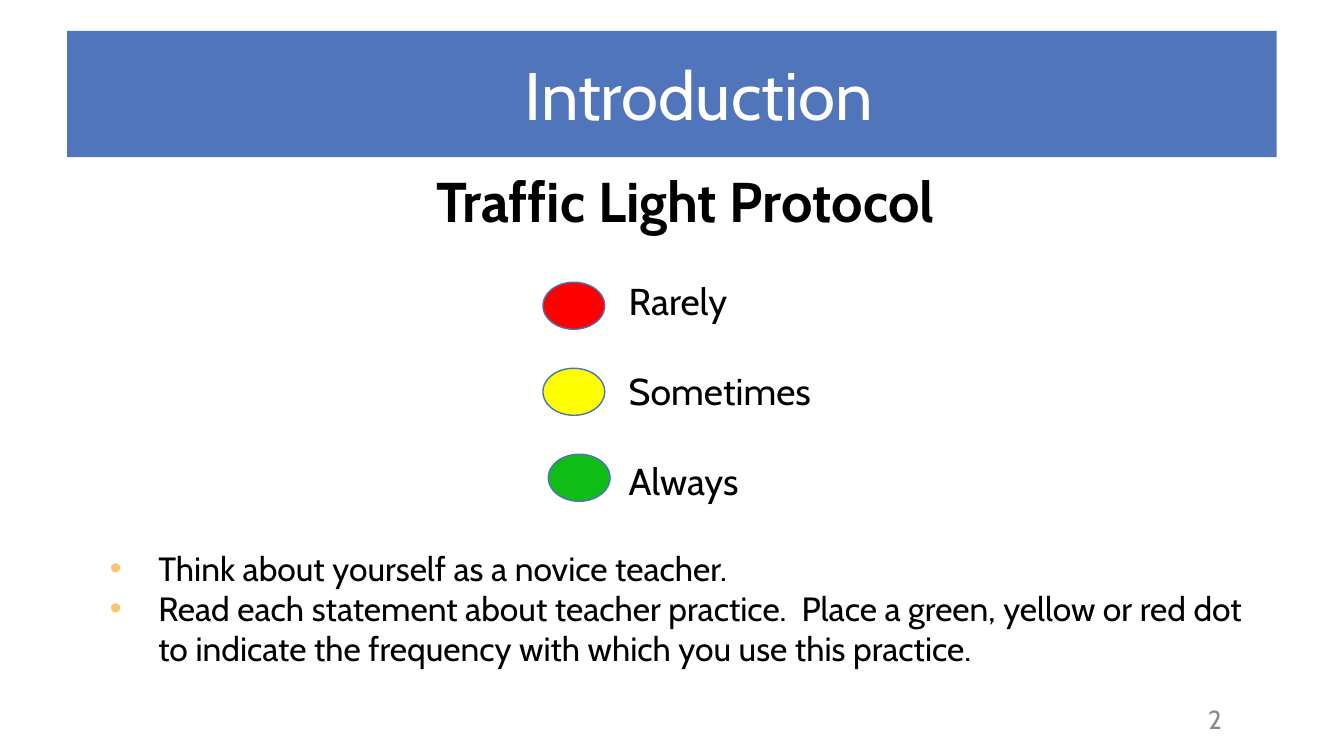
import dataclasses

import pptx
import pptx.dml.color
import pptx.enum.shapes
import pptx.enum.text
import pptx.oxml
import pptx.oxml.ns
import pptx.util

Inches = pptx.util.Inches
Pt = pptx.util.Pt
Align = pptx.enum.text.PP_ALIGN
Anchor = pptx.enum.text.MSO_ANCHOR
Shape = pptx.enum.shapes.MSO_SHAPE


@dataclasses.dataclass(frozen=True)
class Theme:
    font: str = "Cabin"
    banner: str = "5075BB"
    outline: str = "4B72B9"
    bullet: str = "FBC370"
    white: str = "FFFFFF"
    black: str = "000000"
    grey: str = "888888"
    red: str = "FF0000"
    yellow: str = "FFFF00"
    green: str = "10BD16"
    title_size: int = 36
    heading_size: int = 30
    label_size: int = 20
    body_size: int = 18
    number_size: int = 14


class SlideBuilder:
    def __init__(self, slide, theme):
        self.slide = slide
        self.theme = theme

    def color(self, value):
        return pptx.dml.color.RGBColor.from_string(value)

    def shape(self, kind, left, top, width, height, fill, line=None):
        shape = self.slide.shapes.add_shape(
            kind, Inches(left), Inches(top), Inches(width), Inches(height))
        shape.shadow.inherit = False
        shape.fill.solid()
        shape.fill.fore_color.rgb = self.color(fill)
        if line:
            shape.line.color.rgb = self.color(line)
            shape.line.width = Pt(0.75)
        else:
            shape.line.fill.background()
        return shape

    def text_box(self, left, top, width, height):
        return self.slide.shapes.add_textbox(
            Inches(left), Inches(top), Inches(width), Inches(height))

    def frame(self, shape, anchor=Anchor.TOP, left_inset=0.1):
        frame = shape.text_frame
        frame.word_wrap = True
        frame.vertical_anchor = anchor
        frame.margin_left = Inches(left_inset)
        return frame

    def paragraph(self, frame, text, size, color, align=Align.LEFT,
                  bold=False, indent=0, gap=0):
        paragraph = frame.paragraphs[0]
        if paragraph.runs:
            paragraph = frame.add_paragraph()
        paragraph.alignment = align
        paragraph.space_after = Pt(gap)
        paragraph._p.get_or_add_pPr().set("marL", str(Inches(indent)))
        run = paragraph.add_run()
        run.text = text
        run.font.name = self.theme.font
        run.font.size = Pt(size)
        run.font.bold = bold
        run.font.color.rgb = self.color(color)
        return paragraph

    def bullet(self, frame, text):
        paragraph = self.paragraph(
            frame, text, self.theme.body_size, self.theme.black, indent=0.38)
        properties = paragraph._p.get_or_add_pPr()
        properties.set("indent", str(Inches(-0.36)))
        namespace = pptx.oxml.ns.nsdecls("a")
        for xml in (
            f'<a:buClr {namespace}><a:srgbClr val="{self.theme.bullet}"/></a:buClr>',
            f'<a:buFont {namespace} typeface="Arial"/>',
            f'<a:buChar {namespace} char="•"/>',
        ):
            properties.append(pptx.oxml.parse_xml(xml))


def main():
    theme = Theme()
    presentation = pptx.Presentation()
    presentation.slide_width = Inches(10)
    presentation.slide_height = Inches(10 * 9 / 16)
    slide = presentation.slides.add_slide(presentation.slide_layouts[6])
    builder = SlideBuilder(slide, theme)

    number = builder.frame(builder.text_box(8.5, 5.2, 1.08, 0.3), Anchor.MIDDLE)
    builder.paragraph(number, "2", theme.number_size, theme.grey, Align.CENTER)

    body = builder.frame(builder.text_box(0.7, 1.19, 8.8, 3.84))
    banner = builder.shape(Shape.RECTANGLE, 0.5, 0.23, 9, 0.94, theme.banner)
    title = builder.frame(banner, Anchor.MIDDLE, left_inset=0.5)
    builder.paragraph(title, "Introduction", theme.title_size, theme.white, Align.CENTER)

    line_gap = 24
    builder.paragraph(body, "Traffic Light Protocol", theme.heading_size, theme.black,
                      Align.CENTER, bold=True, gap=line_gap)

    lights = (
        ("Rarely", theme.red, 4.04),
        ("Sometimes", theme.yellow, 4.04),
        ("Always", theme.green, 4.08),
    )
    for index, (label, color, left) in enumerate(lights):
        builder.paragraph(body, label, theme.label_size, theme.black,
                          indent=3.88, gap=line_gap)
        builder.shape(Shape.OVAL, left, 2.1 + 0.64 * index, 0.46, 0.35,
                      color, theme.outline)

    builder.bullet(body, "Think about yourself as a novice teacher.")
    builder.bullet(body, "Read each statement about teacher practice.  Place a green, "
                         "yellow or red dot to indicate the frequency with which you "
                         "use this practice.")

    presentation.save("out.pptx")


if __name__ == "__main__":
    main()
